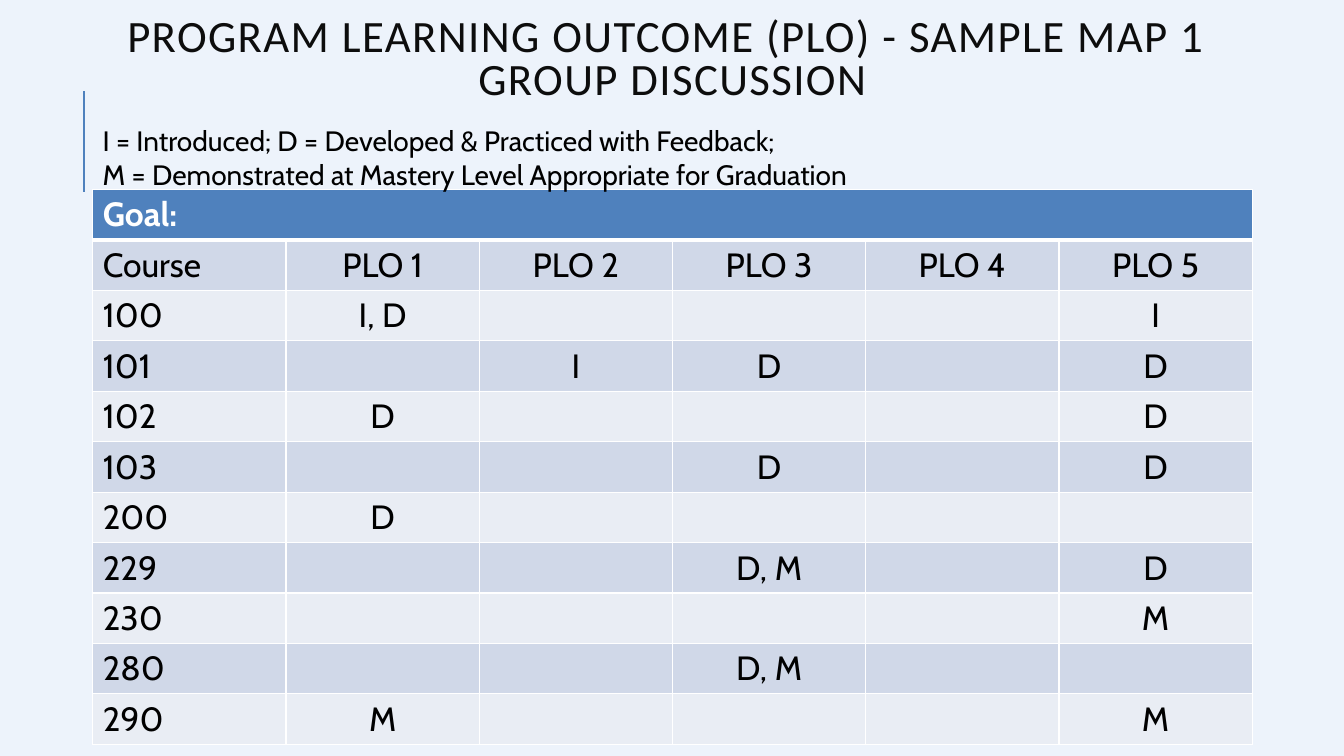
import pptx
import pptx.dml.color
import pptx.enum.shapes
import pptx.enum.text
import pptx.oxml
import pptx.oxml.ns
import pptx.util
from pptx.util import Inches

ALIGN = pptx.enum.text.PP_ALIGN
ANCHOR = pptx.enum.text.MSO_ANCHOR

BLUE, WHITE, BLACK = "4F81BD", "FFFFFF", "000000"
BANDS = ("D0D8E8", "E9EDF4")
LEFT, WIDTH = 0.92, 11.5

OUTCOMES = ["PLO 1", "PLO 2", "PLO 3", "PLO 4", "PLO 5"]
COURSES = [
    ["Course"] + OUTCOMES,
    ["100", "I, D", "", "", "", "I"],
    ["101", "", "I", "D", "", "D"],
    ["102", "D", "", "", "", "D"],
    ["103", "", "", "D", "", "D"],
    ["200", "D", "", "", "", ""],
    ["229", "", "", "D, M", "", "D"],
    ["230", "", "", "", "", "M"],
    ["280", "", "", "D, M", "", ""],
    ["290", "M", "", "", "", "M"],
]


def color(value):
    return pptx.dml.color.RGBColor.from_string(value)


def write_text(frame, text, size=24, font="Cabin", fill=BLACK, bold=False,
               align=ALIGN.LEFT, line_spacing=None, letter_spacing=0):
    """Fill the first paragraph, with a line break at each newline."""
    paragraph = frame.paragraphs[0]
    paragraph.alignment = align
    paragraph.line_spacing = line_spacing
    for number, line in enumerate(text.split("\n")):
        if number:
            paragraph.add_line_break()
        run = paragraph.add_run()
        run.text = line
        run.font.size = pptx.util.Pt(size)
        run.font.name = font
        run.font.bold = bold
        run.font.color.rgb = color(fill)
        if letter_spacing:
            run.font._element.set("spc", str(letter_spacing * 100))


def add_text_box(slide, text, top, height, anchor=ANCHOR.TOP, **text_format):
    shape = slide.shapes.add_textbox(
        Inches(LEFT), Inches(top), Inches(WIDTH), Inches(height))
    shape.text_frame.word_wrap = True
    shape.text_frame.vertical_anchor = anchor
    write_text(shape.text_frame, text, **text_format)


def add_accent_line(slide):
    line = slide.shapes.add_connector(
        pptx.enum.shapes.MSO_CONNECTOR.STRAIGHT,
        Inches(0.83), Inches(1.9), Inches(0.83), Inches(0.9))
    line.line.color.rgb = color(BLUE)
    line.line.width = pptx.util.Pt(1.5)
    properties = line._element.spPr
    properties.append(properties.makeelement(pptx.oxml.ns.qn("a:effectLst"), {}))


def style_cell(cell, fill, top=1, bottom=1):
    """Give the cell white borders, in points, and a plain fill."""
    properties = cell._tc.get_or_add_tcPr()
    for side, width in (("L", 1), ("R", 1), ("T", top), ("B", bottom)):
        properties.append(pptx.oxml.parse_xml(
            f'<a:ln{side} {pptx.oxml.ns.nsdecls("a")} w="{pptx.util.Pt(width)}">'
            f'<a:solidFill><a:srgbClr val="{WHITE}"/></a:solidFill></a:ln{side}>'))
    cell.fill.solid()
    cell.fill.fore_color.rgb = color(fill)


def add_course_table(slide):
    row_count, column_count = len(COURSES) + 1, len(COURSES[0])
    table = slide.shapes.add_table(
        row_count, column_count, Inches(LEFT), Inches(1.88),
        Inches(WIDTH), Inches(0.5 * row_count)).table

    # Goal row across all columns
    for cell in table.rows[0].cells:
        style_cell(cell, BLUE, bottom=3)
    goal = table.cell(0, 0)
    goal.merge(table.cell(0, column_count - 1))
    write_text(goal.text_frame, "Goal:", fill=WHITE, bold=True)

    # Banded course rows
    for row, values in enumerate(COURSES, start=1):
        for column, value in enumerate(values):
            cell = table.cell(row, column)
            style_cell(cell, BANDS[(row - 1) % 2], top=3 if row == 1 else 1)
            if value:
                write_text(cell.text_frame, value,
                           align=ALIGN.CENTER if column else ALIGN.LEFT)


def main():
    presentation = pptx.Presentation()
    presentation.slide_width = Inches(13.33)
    presentation.slide_height = Inches(7.5)
    slide = presentation.slides.add_slide(presentation.slide_layouts[6])
    slide.background.fill.solid()
    slide.background.fill.fore_color.rgb = color("EDF3FB")

    add_accent_line(slide)
    add_text_box(
        slide, "PROGRAM LEARNING OUTCOME (PLO) - SAMPLE MAP 1 \nGROUP DISCUSSION",
        0.03, 1.15, anchor=ANCHOR.MIDDLE, size=32, font="Calibri", fill="0D0D0D",
        align=ALIGN.CENTER, line_spacing=0.8, letter_spacing=1)
    add_course_table(slide)
    # Key to the letters in the table
    add_text_box(
        slide, "I = Introduced; D = Developed & Practiced with Feedback; \n"
        "M = Demonstrated at Mastery Level Appropriate for Graduation",
        1.18, 0.77, size=20)
    presentation.save("out.pptx")


if __name__ == "__main__":
    main()
